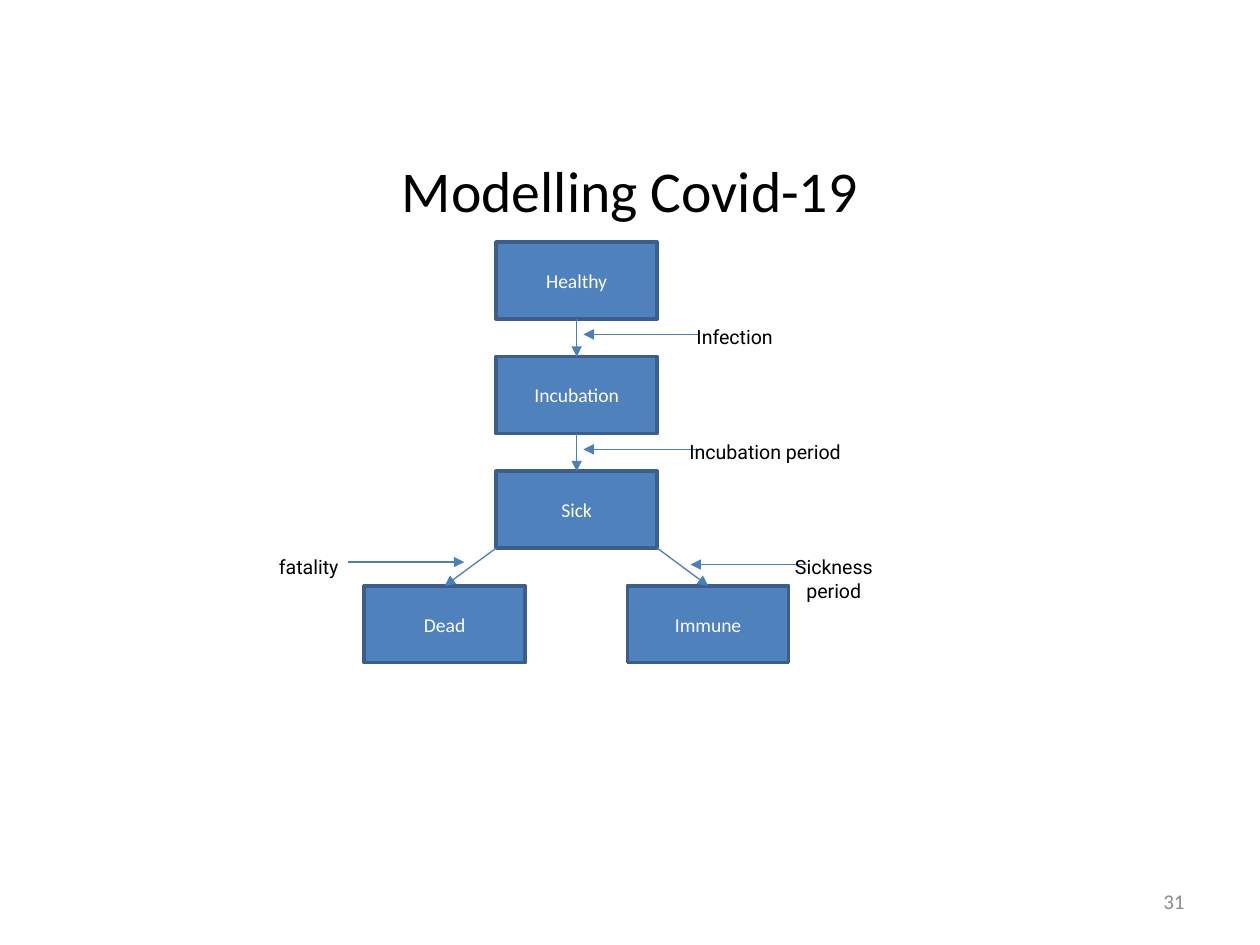
from dataclasses import dataclass

from lxml import etree
from pptx import Presentation
from pptx import util as u
from pptx.dml.color import RGBColor
from pptx.enum import shapes, text
from pptx.oxml.ns import qn


@dataclass(frozen=True)
class Theme:
    font: str = "Calibri"
    label_font: str = "Roboto"
    box_fill: str = "4F81BD"
    box_line: str = "3A5F8C"
    arrow: str = "4B7EBC"
    white: str = "FFFFFF"
    black: str = "000000"
    grey: str = "8C8C8C"
    title_size: float = 33
    body_size: float = 11.2
    number_size: float = 12


BOX_WIDTH, BOX_HEIGHT = 3.25, 1.55
TOP, ROW_STEP = 4.88, 2.31
POINTER_LENGTH = 2.34
LEFT, MIDDLE, RIGHT = 7.34, 10, 12.65


class FlowSlide:
    def __init__(self, page, theme):
        self.page = page
        self.theme = theme

    def set_words(self, shape, words, size, color, font, align):
        shape.text_frame.text = words
        para = shape.text_frame.paragraphs[0]
        para.alignment = align
        span = para.runs[0]
        span.font.size = u.Pt(size)
        span.font.name = font
        span.font.color.rgb = RGBColor.from_string(color)
        return para

    def state(self, words, left, row):
        box = self.page.shapes.add_shape(
            shapes.MSO_SHAPE.RECTANGLE, u.Cm(left), u.Cm(TOP + row * ROW_STEP),
            u.Cm(BOX_WIDTH), u.Cm(BOX_HEIGHT))
        box.shadow.inherit = False
        box.fill.solid()
        box.fill.fore_color.rgb = RGBColor.from_string(self.theme.box_fill)
        box.line.color.rgb = RGBColor.from_string(self.theme.box_line)
        box.line.width = u.Pt(2)
        box.text_frame.vertical_anchor = text.MSO_ANCHOR.MIDDLE
        self.set_words(box, words, self.theme.body_size, self.theme.white,
                       self.theme.font, text.PP_ALIGN.CENTER)
        return box

    def arrow(self, x1, y1, x2, y2):
        line = self.page.shapes.add_connector(
            shapes.MSO_CONNECTOR.STRAIGHT, *map(u.Cm, (x1, y1, x2, y2)))
        line.line.color.rgb = RGBColor.from_string(self.theme.arrow)
        line.line.width = u.Pt(0.75)
        etree.SubElement(line.get_or_add_ln(), qn("a:tailEnd"), type="triangle")
        etree.SubElement(line.element.spPr, qn("a:effectLst"))
        return line

    def join(self, upper, lower):
        line = self.arrow(0, 0, 1, 1)
        line.begin_connect(upper, 2)
        line.end_connect(lower, 0)

    def branch(self, x, y, lower):
        """Arrow from a free point to the top of a state."""
        self.arrow(x, y, x + 1, y + 1).end_connect(lower, 0)

    def text_box(self, words, left, top, width, height, size, color, font, align):
        box = self.page.shapes.add_textbox(*map(u.Cm, (left, top, width, height)))
        box.text_frame.word_wrap = True
        return box, self.set_words(box, words, size, color, font, align)

    def label(self, words, left, top, width, right_inset=None):
        """Single-line label, or a wrapped one when a right inset is given."""
        box, _ = self.text_box(words, left, top, width, 0.74, self.theme.body_size,
                               self.theme.black, self.theme.label_font,
                               text.PP_ALIGN.CENTER)
        frame = box.text_frame
        frame.auto_size = text.MSO_AUTO_SIZE.SHAPE_TO_FIT_TEXT
        if right_inset is None:
            frame.word_wrap = False
        else:
            frame.margin_left = u.Cm(0.2)
            frame.margin_right = u.Cm(right_inset)

    def title(self, words):
        _, para = self.text_box(words, 1.75, 3.15, 21.9, 2.77, self.theme.title_size,
                                self.theme.black, self.theme.font,
                                text.PP_ALIGN.CENTER)
        para.line_spacing = 0.9

    def page_number(self, words):
        box, _ = self.text_box(words, 18.21, 17.65, 5.92, 1.02, self.theme.number_size,
                               self.theme.grey, self.theme.font, text.PP_ALIGN.RIGHT)
        box.text_frame.vertical_anchor = text.MSO_ANCHOR.MIDDLE


def main():
    deck = Presentation()
    deck.slide_width, deck.slide_height = u.Cm(25.4), u.Cm(19.05)
    flow = FlowSlide(deck.slides.add_slide(deck.slide_layouts[6]), Theme())

    healthy, incubation, sick = [
        flow.state(words, MIDDLE, row)
        for row, words in enumerate(("Healthy", "Incubation", "Sick"))]
    dead = flow.state("Dead", LEFT, 3)
    immune = flow.state("Immune", RIGHT, 3)

    flow.join(healthy, incubation)
    flow.join(incubation, sick)
    sick_bottom = TOP + 2 * ROW_STEP + BOX_HEIGHT
    flow.branch(MIDDLE, sick_bottom, dead)
    flow.branch(MIDDLE + BOX_WIDTH, sick_bottom, immune)

    # pointer start x, pointer y, direction, label, left, top, width, right inset
    for x, y, direction, *label in (
            (14.1, 6.74, -1, "Infection", 13.77, 6.43, 2.08),
            (14.1, 9.06, -1, "Incubation period", 13.61, 8.74, 3.63),
            (16.26, 11.38, -1, "Sickness period", 15.77, 11.07, 3.23, 1.35),
            (7.02, 11.33, 1, "fatality", 5.36, 11.07, 1.73)):
        flow.arrow(x, y, x + direction * POINTER_LENGTH, y)
        flow.label(*label)

    flow.title("Modelling Covid-19")
    flow.page_number("31")
    deck.save("out.pptx")


if __name__ == "__main__":
    main()
